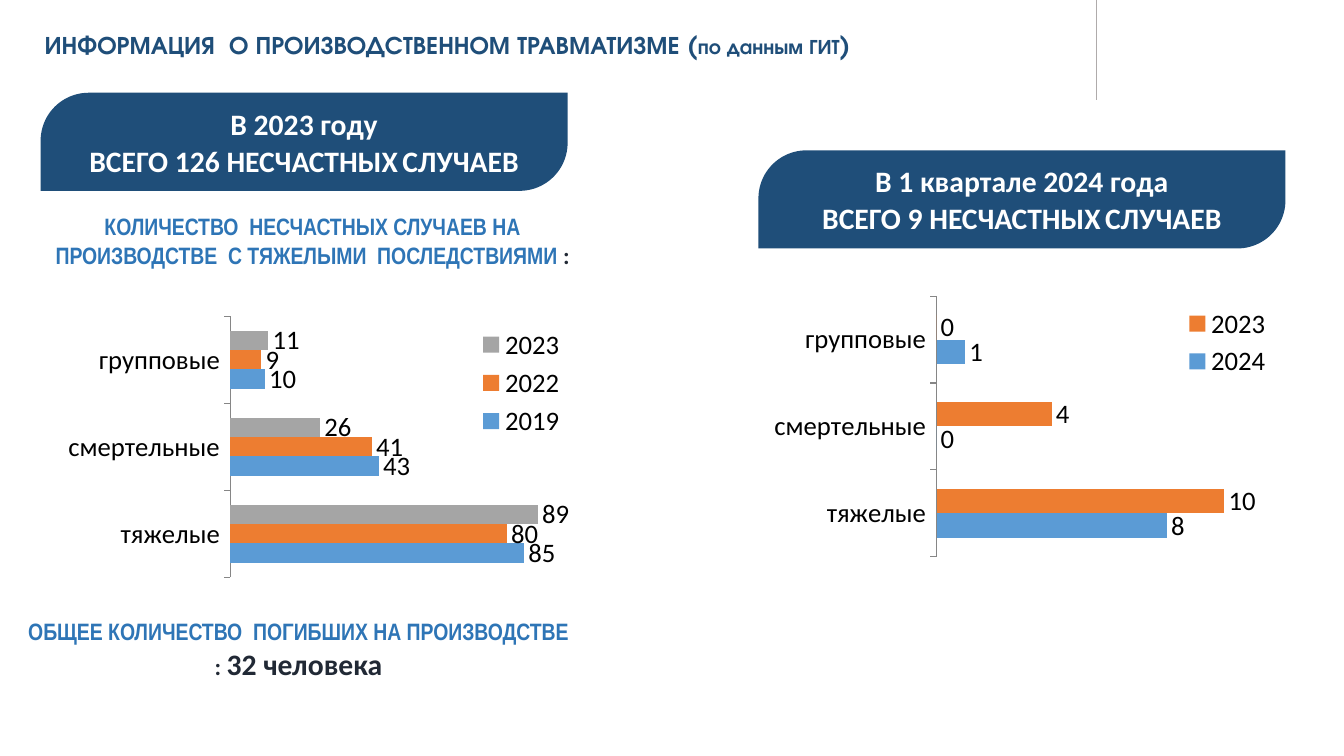
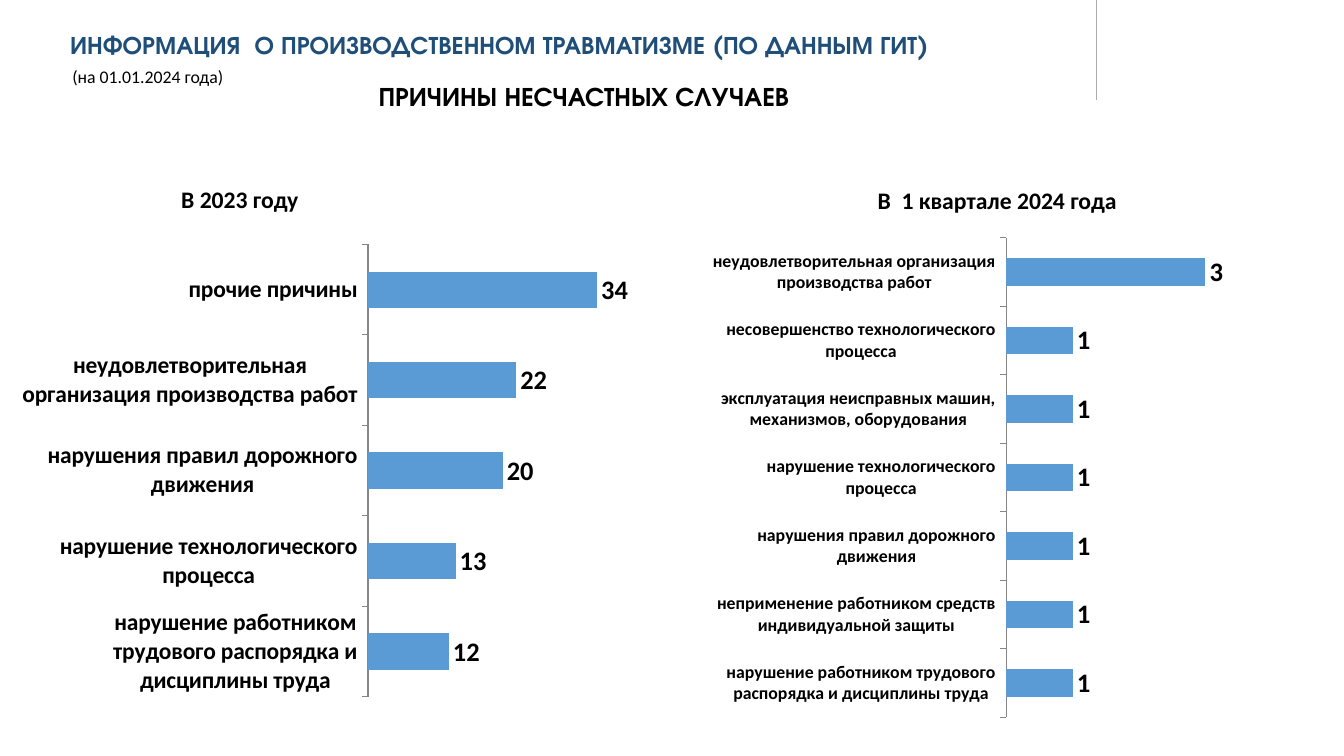
from dataclasses import dataclass

from pptx import Presentation
from pptx.chart.data import CategoryChartData
from pptx.dml.color import RGBColor
from pptx.enum.chart import XL_CHART_TYPE, XL_LABEL_POSITION, XL_LEGEND_POSITION, XL_TICK_MARK
from pptx.enum.shapes import MSO_CONNECTOR, MSO_SHAPE
from pptx.enum.text import MSO_ANCHOR, PP_ALIGN
from pptx.oxml import parse_xml
from pptx.oxml.ns import nsdecls, qn
from pptx.util import Inches, Pt

SLIDE_WIDTH, SLIDE_HEIGHT = Inches(12.6), Inches(7.09)
NAVY, SKY, INK, BLACK, WHITE = "1F4E79", "2E75B6", "212935", "000000", "FFFFFF"
RULE_GREY, AXIS_GREY = "AFABAB", "868686"
BAR_COLOURS = ("5B9BD5", "ED7D31", "A5A5A5")
HEADING_FONT, BODY_FONT, NARROW_FONT = "TeX Gyre Adventor", "Calibri", "Arial Narrow"
RULE_LEFT, RULE_BOTTOM = 81.59, 13.26
BANNER_SIZE = (39.21, 12.98)
CASE_CHART_SIZE = (42.86, 48.38)
CASE_PLOT = (0.4, 0.043, 0.6, 0.713)
LEGEND_LEFT, LEGEND_TOP, LEGEND_WIDTH, LEGEND_ROW = 0.82, 0.06, 0.17, 0.11


@dataclass
class Area:
    """A box in percent of the slide's width and height."""
    left: float
    top: float
    width: float
    height: float

    def lengths(self):
        return (across(self.left), down(self.top), across(self.width), down(self.height))


@dataclass
class Span:
    text: str
    size: float
    colour: str = BLACK
    font: str = BODY_FONT
    bold: bool = True


def across(percent):
    return int(SLIDE_WIDTH * percent / 100)


def down(percent):
    return int(SLIDE_HEIGHT * percent / 100)


def rgb(colour):
    return RGBColor.from_string(colour)


def style_font(font, size, colour=BLACK, name=BODY_FONT, bold=False):
    font.size, font.name, font.bold = Pt(size), name, bold
    font.color.rgb = rgb(colour)


def write_spans(para, spans):
    for span in spans:
        run = para.add_run()
        run.text = span.text
        style_font(run.font, span.size, span.colour, span.font, span.bold)


def add_text(page, area, spans, align=PP_ALIGN.LEFT, tight=False):
    """A wrapped text box; tight leaves out its margins."""
    frame = page.shapes.add_textbox(*area.lengths()).text_frame
    frame.word_wrap = True
    if tight:
        frame.margin_left = frame.margin_right = frame.margin_bottom = 0
        frame.margin_top = Inches(0.01)
    para = frame.paragraphs[0]
    para.alignment = align
    write_spans(para, spans)
    return para


def add_page(deck, title_area, title_parts):
    """A blank page with the thin upright rule and the title."""
    page = deck.slides.add_slide(deck.slide_layouts[6])
    rule = page.shapes.add_connector(
        MSO_CONNECTOR.STRAIGHT, across(RULE_LEFT), 0, across(RULE_LEFT), down(RULE_BOTTOM))
    rule.line.color.rgb = rgb(RULE_GREY)
    rule.line.width = Pt(0.75)
    rule._element.spPr.append(parse_xml(f"<a:effectLst {nsdecls('a')}/>"))
    spans = [Span(text, size, NAVY, HEADING_FONT) for text, size in title_parts]
    add_text(page, title_area, spans).line_spacing = 0.9
    return page


def add_banner(page, left, top, period, total):
    banner = page.shapes.add_shape(
        MSO_SHAPE.ROUND_2_DIAG_RECTANGLE, *Area(left, top, *BANNER_SIZE).lengths())
    banner.shadow.inherit = False
    banner.adjustments[0], banner.adjustments[1] = 0.489, 0
    banner.fill.solid()
    banner.fill.fore_color.rgb = rgb(NAVY)
    banner.line.fill.background()
    frame = banner.text_frame
    frame.word_wrap = True
    frame.vertical_anchor = MSO_ANCHOR.MIDDLE
    frame.margin_left = frame.margin_right = frame.margin_top = frame.margin_bottom = 0
    first, second = frame.paragraphs[0], frame.add_paragraph()
    write_spans(first, [Span(period, 20, WHITE)])
    write_spans(second, [Span(f"ВСЕГО {total} НЕСЧАСТНЫХ", 20, WHITE),
                         Span(" ", 12, WHITE), Span("СЛУЧАЕВ", 20, WHITE)])
    second.space_before = Pt(1)
    for para in (first, second):
        para.alignment = PP_ALIGN.CENTER


def set_layout(parent, index, shares, inner=False):
    """Fix the place of a chart part, in shares of the chart's size."""
    for old in parent.findall(qn("c:layout")):
        parent.remove(old)
    target = '<c:layoutTarget val="inner"/>' if inner else ""
    modes = "".join(f'<c:{side}Mode val="edge"/>' for side in "xy")
    values = "".join(f'<c:{side} val="{share}"/>' for side, share in zip("xywh", shares))
    parent.insert(index, parse_xml(
        f"<c:layout {nsdecls('c')}><c:manualLayout>{target}{modes}{values}"
        "</c:manualLayout></c:layout>"))


def add_bar_chart(page, area, categories, series, plot_shares, maximum,
                  category_size=18, bold=False):
    data = CategoryChartData(number_format="0")
    data.categories = categories
    for name, values in series:
        data.add_series(name, values)
    chart = page.shapes.add_chart(
        XL_CHART_TYPE.BAR_CLUSTERED, *area.lengths(), data).chart
    chart.has_title = False
    chart.has_legend = False
    style_font(chart.font, 18)
    set_layout(chart.element.find(".//" + qn("c:plotArea")), 0, plot_shares, inner=True)

    value_axis, category_axis = chart.value_axis, chart.category_axis
    value_axis.minimum_scale, value_axis.maximum_scale = 0, maximum
    value_axis.has_major_gridlines = False
    value_axis.visible = False
    category_axis.major_tick_mark = XL_TICK_MARK.OUTSIDE
    category_axis.format.line.color.rgb = rgb(AXIS_GREY)
    style_font(category_axis.tick_labels.font, category_size, bold=bold)

    plot = chart.plots[0]
    plot.gap_width, plot.overlap, plot.vary_by_categories = 150, 0, False
    for bars, colour in zip(plot.series, BAR_COLOURS):
        bars.format.fill.solid()
        bars.format.fill.fore_color.rgb = rgb(colour)
        bars.invert_if_negative = False
        labels = bars.data_labels
        labels.show_value = True
        labels.position = XL_LABEL_POSITION.OUTSIDE_END
        style_font(labels.font, 18, bold=bold)
    return chart


def add_case_chart(page, left, top, series, maximum):
    """Bars by severity of accident, with a legend of years."""
    chart = add_bar_chart(page, Area(left, top, *CASE_CHART_SIZE),
                          ("тяжелые", "смертельные", "групповые"),
                          series, CASE_PLOT, maximum)
    chart.has_legend = True
    chart.legend.position = XL_LEGEND_POSITION.RIGHT
    chart.legend.include_in_layout = False
    style_font(chart.legend.font, 18)
    set_layout(chart.element.find(".//" + qn("c:legend")), 1,
               (LEGEND_LEFT, LEGEND_TOP, LEGEND_WIDTH, LEGEND_ROW * len(series)))


def add_cause_chart(page, area, causes, plot_shares, maximum, category_size):
    """Bars of one colour; causes are (name, number) pairs from the bottom up."""
    names, numbers = zip(*causes)
    add_bar_chart(page, area, names, [("Series 1", numbers)], plot_shares,
                  maximum, category_size, bold=True)


def add_caption(page, area, text, ending):
    add_text(page, area, [Span(text, 16, SKY, NARROW_FONT), *ending],
             PP_ALIGN.CENTER, tight=True)


def build_cases_page(deck):
    page = add_page(deck, Area(2.54, 3.67, 80.63, 13.68),
                    [("ИНФОРМАЦИЯ  О ПРОИЗВОДСТВЕННОМ ТРАВМАТИЗМЕ (", 17),
                     ("по данным ГИТ", 14), (")", 17)])
    add_banner(page, 3.02, 12.27, "В 2023 году", 126)
    add_caption(page, Area(2.94, 27.93, 40.63, 7.76),
                "КОЛИЧЕСТВО  НЕСЧАСТНЫХ СЛУЧАЕВ НА ПРОИЗВОДСТВЕ  С ТЯЖЕЛЫМИ  ПОСЛЕДСТВИЯМИ ",
                [Span(":", 16, INK)])
    add_case_chart(page, 0, 39.77, [("2019", (85, 43, 10)), ("2022", (80, 41, 9)),
                                    ("2023", (89, 26, 11))], 100)
    add_caption(page, Area(1.9, 81.52, 40.63, 8.74),
                "ОБЩЕЕ КОЛИЧЕСТВО  ПОГИБШИХ НА ПРОИЗВОДСТВЕ ",
                [Span(": ", 16, INK), Span("32 человека", 20, INK)])
    add_banner(page, 56.43, 19.89, "В 1 квартале 2024 года", 9)
    add_case_chart(page, 52.54, 37.09, [("2024", (8, 0, 1)), ("2023", (10, 4, 0))], 12)


def build_causes_page(deck):
    page = add_page(deck, Area(4.44, 3.67, 77.54, 13.68),
                    [("ИНФОРМАЦИЯ  О ПРОИЗВОДСТВЕННОМ ТРАВМАТИЗМЕ (ПО ДАННЫМ ГИТ)", 17)])
    add_text(page, Area(4.6, 8.04, 61.11, 4.23),
             [Span("(на 01.01.2024 года)", 12, bold=False)])
    add_text(page, Area(28.17, 10.44, 37.06, 4.51),
             [Span("ПРИЧИНЫ НЕСЧАСТНЫХ СЛУЧАЕВ", 18, font=HEADING_FONT)], tight=True)
    add_text(page, Area(12.7, 23.7, 13.1, 5.22), [Span("В 2023 году", 16)])
    add_text(page, Area(64.52, 23.84, 20, 5.22), [Span("В  1 квартале 2024 года", 16)])

    discipline = "нарушение работником трудового распорядка и дисциплины труда"
    technology = "нарушение технологического процесса"
    traffic = "нарушения правил дорожного движения"
    organisation = "неудовлетворительная организация производства работ"
    add_cause_chart(page, Area(1.67, 30.75, 50.24, 63.33),
                    [(discipline, 12), (technology, 13), (traffic, 20),
                     (organisation, 22), ("прочие причины", 34)],
                    (0.507, 0.025, 0.403, 0.945), 40, 16)
    add_cause_chart(page, Area(52.94, 29.76, 44.68, 67.14),
                    [(discipline, 1),
                     ("неприменение работником средств индивидуальной защиты", 1),
                     (traffic, 1), (technology, 1),
                     ("эксплуатация неисправных машин, механизмов, оборудования", 1),
                     ("несовершенство технологического процесса", 1),
                     (organisation, 3)],
                    (0.491, 0.025, 0.387, 0.945), 3.5, 12)


def main():
    deck = Presentation()
    deck.slide_width, deck.slide_height = SLIDE_WIDTH, SLIDE_HEIGHT
    build_cases_page(deck)
    build_causes_page(deck)
    deck.save("out.pptx")


if __name__ == "__main__":
    main()
